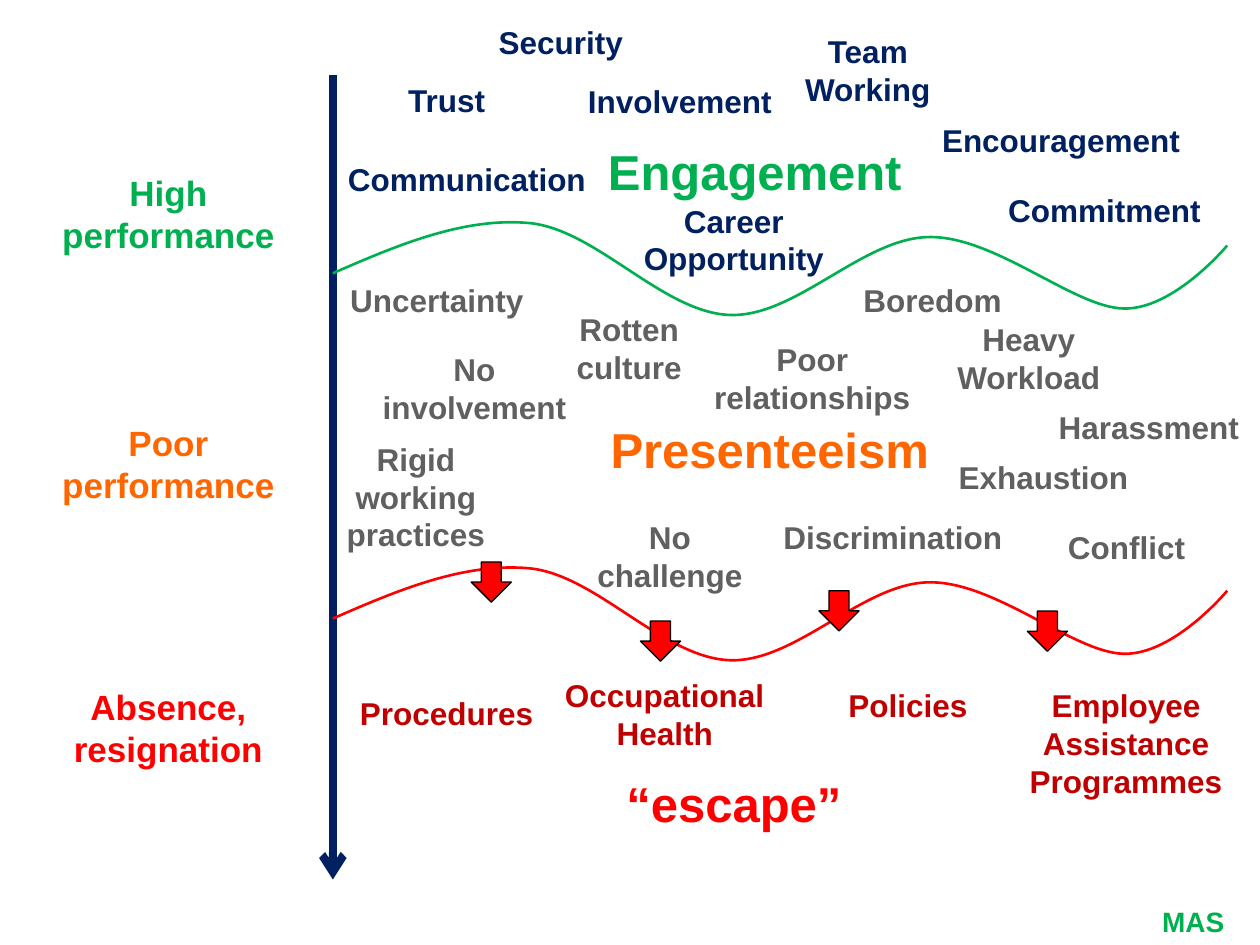
import pptx
import pptx.util
import pptx.dml.color
import pptx.enum.shapes
import pptx.enum.text
import pptx.oxml
import pptx.oxml.ns
from pptx.util import Cm

HUES = {"navy": "002060", "green": "00B050", "orange": "FF6600", "red": "FF0000",
        "gray": "606060", "dark": "C00000", "black": "000000"}

# All lengths in cm; words are (text, x, y, width) from the corner of their band.
BANDS = [
    {"box": (6.71, 0.33), "hue": "green", "tint": "navy",
     "head": ("Engagement", 5, 2.39, 7.01),
     "side": ("High performance", 3), "wave": 4.04, "drops": [],
     "words": [("Trust", 1.19, 1.17, 2.21), ("Commitment", 13, 3.4, 5.11),
               ("Encouragement", 11.99, 1.98, 5.38), ("Team Working", 8.59, 0.2, 4.39),
               ("Involvement", 4.8, 1.19, 4.39), ("Security", 2.79, 0, 3.61),
               ("Career Opportunity", 5.38, 3.61, 5.41),
               ("Communication", 0, 2.77, 5.41)]},
    {"box": (6.71, 5.54), "hue": "orange", "tint": "gray",
     "head": ("Presenteeism", 5.21, 2.79, 7.19),
     "side": ("Poor performance", 2.84), "wave": 5.79,
     "drops": [(2.79, 0), (6.2, 1.19), (9.8, 0.58), (14, 0.99)],
     "words": [("Uncertainty", 0, 0, 4.19), ("Rotten culture", 3.78, 0.58, 4.39),
               ("Poor relationships", 7.19, 1.19, 4.95), ("Boredom", 10.39, 0, 3.4),
               ("Heavy Workload", 11.68, 0.79, 4.7), ("Harassment", 14.2, 2.57, 4.5),
               ("Exhaustion", 12.19, 3.56, 4.27), ("Conflict", 14.4, 4.98, 3.2),
               ("Discrimination", 8.79, 4.78, 5), ("No challenge", 4.8, 4.78, 3.99),
               ("Rigid working practices", -0.41, 3.2, 4.17),
               ("No involvement", 0.58, 1.4, 4.55)]},
    {"box": (6.71, 13.51), "hue": "red", "tint": "dark",
     "head": ("“escape”", 5.38, 1.96, 5.41),
     "side": ("Absence, resignation", 0.18), "wave": None, "drops": [],
     "words": [("Procedures", 0.2, 0.36, 4.19),
               ("Employee Assistance Programmes", 13.59, 0.2, 4.8),
               ("Policies", 9.6, 0.2, 3.99), ("Occupational Health", 4.39, 0, 4.6)]},
]

# Start point, then two handles and an end point for each curve.
WAVE = [(0, 1.14), (1.33, 0.56), (2.66, 0), (3.99, 0.13), (5.33, 0.28), (6.66, 1.93),
        (8, 1.98), (9.33, 2.03), (10.68, 0.43), (12.01, 0.41), (13.34, 0.38),
        (14.94, 1.83), (15.94, 1.85), (16.95, 1.88), (18.03, 0.58), (18.03, 0.58)]


def hue(name):
    return pptx.dml.color.RGBColor.from_string(HUES[name])


def stroke(line, name, width):
    line.color.rgb = hue(name)
    line.width = pptx.util.Pt(width)


def put_text(slide, text, x, y, width, size, name):
    """Place bold centred text, with one line for each word."""
    high = 0.25 + len(text.split()) * size * 1.2 * 2.54 / 72
    frame = slide.shapes.add_textbox(Cm(x), Cm(y), Cm(width), Cm(high)).text_frame
    frame.word_wrap = True
    para = frame.paragraphs[0]
    para.alignment = pptx.enum.text.PP_ALIGN.CENTER
    run = para.add_run()
    run.text = text
    font = run.font
    font.name, font.size, font.bold = "Arial", pptx.util.Pt(size), True
    font.color.rgb = hue(name)


def put_wave(slide, x, y, name):
    """Draw the wave, turning each three segments into one Bézier curve."""
    start, *rest = [(Cm(x + dx), Cm(y + dy)) for dx, dy in WAVE]
    pen = slide.shapes.build_freeform(*start)
    pen.add_line_segments(rest, close=False)
    shape = pen.convert_to_shape()
    shape.shadow.inherit = False
    shape.fill.background()
    stroke(shape.line, name, 1.5)
    qn = pptx.oxml.ns.qn
    steps = list(shape.element.iter(qn("a:lnTo")))
    for i in range(0, len(steps), 3):
        curve = steps[i].getparent().makeelement(qn("a:cubicBezTo"), {})
        steps[i].addprevious(curve)
        for step in steps[i:i + 3]:
            curve.append(step[0])
            step.getparent().remove(step)


def put_drop(slide, x, y):
    kind = pptx.enum.shapes.MSO_SHAPE.DOWN_ARROW
    drop = slide.shapes.add_shape(kind, Cm(x), Cm(y), Cm(0.81), Cm(0.81))
    drop.shadow.inherit = False
    drop.fill.solid()
    drop.fill.fore_color.rgb = hue("red")
    stroke(drop.line, "black", 0.75)


def put_axis(slide, x, top, end):
    kind = pptx.enum.shapes.MSO_CONNECTOR.STRAIGHT
    axis = slide.shapes.add_connector(kind, Cm(x), Cm(top), Cm(x), Cm(end))
    stroke(axis.line, "navy", 4.5)
    space = pptx.oxml.ns.nsdecls("a")
    axis.line._get_or_add_ln().append(
        pptx.oxml.parse_xml(f'<a:tailEnd {space} type="arrow"/>'))
    axis.element.spPr.append(pptx.oxml.parse_xml(f"<a:effectLst {space}/>"))


def put_band(slide, band):
    """Place a band: side label, heading, words, and the wave below them."""
    x, y = band["box"]
    side, drop = band["side"]
    put_text(slide, side, x - 6.02, y + drop, 5.41, 20, band["hue"])
    if band["wave"] is not None:
        edge = y + band["wave"]
        put_wave(slide, x, edge, "red" if band["drops"] else "green")
        for dx, dy in band["drops"]:
            put_drop(slide, x + dx, edge + dy)
    text, dx, dy, width = band["head"]
    put_text(slide, text, x + dx, y + dy, width, 28, band["hue"])
    for text, dx, dy, width in band["words"]:
        put_text(slide, text, x + dx, y + dy, width, 18, band["tint"])


def main():
    deck = pptx.Presentation()
    deck.slide_width, deck.slide_height = Cm(25.4), Cm(19.05)
    slide = deck.slides.add_slide(deck.slide_layouts[6])
    put_axis(slide, 6.71, 1.52, 17.73)
    for band in BANDS:
        put_band(slide, band)
    put_text(slide, "MAS", 22.71, 18.11, 2.69, 16, "green")
    deck.save("out.pptx")


if __name__ == "__main__":
    main()
